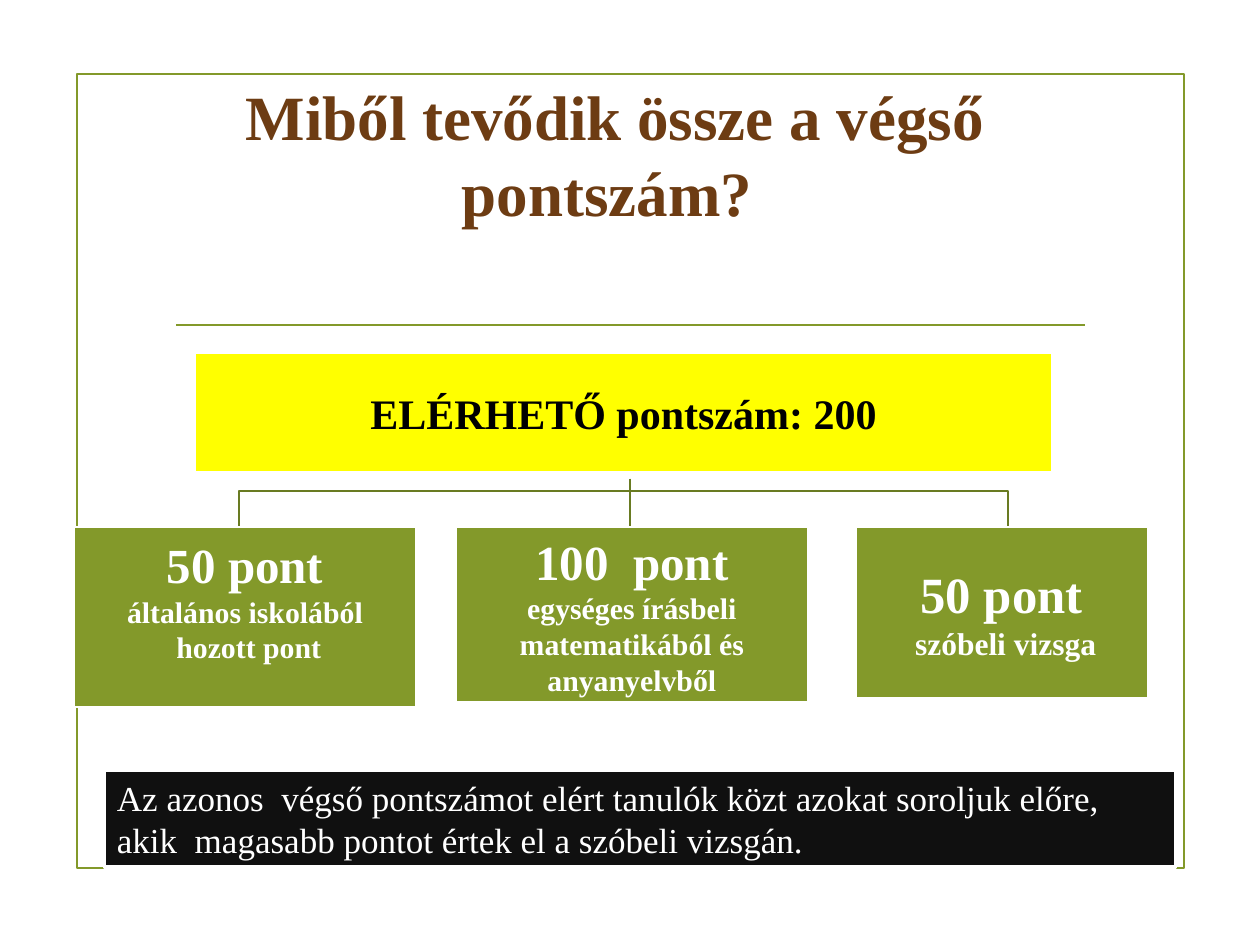
from pptx import Presentation
from pptx.util import Inches, Pt
from pptx.dml.color import RGBColor
from pptx.enum.shapes import MSO_SHAPE, MSO_CONNECTOR
from pptx.enum.text import PP_ALIGN, MSO_ANCHOR
from lxml import etree

RECT = MSO_SHAPE.RECTANGLE
LINE = MSO_CONNECTOR.STRAIGHT
LEFT, MID = PP_ALIGN.LEFT, PP_ALIGN.CENTER
CENTER = MSO_ANCHOR.MIDDLE
FONT = "Times New Roman"
HEX = {"green": "83992A", "dark": "697B22", "brown": "6D3C13",
       "yellow": "FFFF00", "white": "FFFFFF", "black": "000000", "ink": "101010"}
RGB = {name: RGBColor.from_string(code) for name, code in HEX.items()}

# Grid of 100 columns by 75 rows
deck = Presentation()
deck.slide_width, deck.slide_height = Inches(10), Inches(7.5)
CELL = deck.slide_width // 100
slide = deck.slides.add_slide(deck.slide_layouts[5])
shapes = slide.shapes


def block(col, row, wide, high, fill, edge="white", width=1.25):
    box = shapes.add_shape(RECT, *[int(n * CELL) for n in (col, row, wide, high)])
    box.shadow.inherit = False
    if fill:
        box.fill.solid()
        box.fill.fore_color.rgb = RGB[fill]
    else:
        box.fill.background()
    box.line.color.rgb = RGB[edge]
    box.line.width = Pt(width)
    return box


def write(box, lines, color, bold=True, align=MID, pad=None, foot=None):
    frame = box.text_frame
    frame.word_wrap = True
    frame.vertical_anchor = CENTER
    if pad is not None:
        frame.margin_left = frame.margin_right = Inches(pad)
        frame.margin_top = frame.margin_bottom = Inches(pad)
    if foot is not None:
        frame.margin_bottom = Inches(foot)
    for i, (text, size) in enumerate(lines):
        para = frame.add_paragraph() if i else frame.paragraphs[0]
        para.alignment = align
        run = para.add_run()
        run.text = text
        run.font.name, run.font.size, run.font.bold = FONT, Pt(size), bold
        run.font.color.rgb = RGB[color]


# Frame and rule
block(6.1, 5.9, 87.9, 63, None, "green")
rule = shapes.add_connector(LINE, 14 * CELL, int(25.8 * CELL),
                            int(86.1 * CELL), int(25.8 * CELL))
rule.line.color.rgb = RGB["green"]
rule.line.width = Pt(1.25)
etree.SubElement(rule._element.spPr,
                 "{http://schemas.openxmlformats.org/drawingml/2006/main}effectLst")

# Title
title = shapes.title
title.left, title.top, title.width, title.height = [
    int(n * CELL) for n in (11.6, 6.8, 74.4, 14.3)]
write(title, [("Miből tevődik össze a végső pontszám? ", 36)], "brown", foot=0.41)

# Parts of the score: left, width, height, bottom margin, lines
TOP, FORK, BASE, STEM = 41.8, 38.7, 37.5, 49.5
cards = [
    (5.9, 27.1, 14.3, 0.29, [("50 pont", 28), ("általános iskolából", 17),
                             (" hozott pont", 17)]),
    (36.2, 27.9, 13.9, 0.02, [("100  pont", 28), ("egységes írásbeli", 17),
                              ("matematikából és anyanyelvből", 17)]),
    (67.9, 23.2, 13.6, 0.02, [("50 pont", 29), (" szóbeli vizsga", 18)]),
]

# Branches from the total to each part
for col, wide, *_ in cards:
    mid = col + wide / 2
    path = shapes.build_freeform(STEM, BASE, scale=CELL)
    path.add_line_segments([(STEM, FORK), (mid, FORK), (mid, TOP)], close=False)
    branch = path.convert_to_shape()
    branch.shadow.inherit = False
    branch.fill.background()
    branch.line.color.rgb = RGB["dark"]
    branch.line.width = Pt(1.25)

# Total and parts
total = block(15.5, 28, 68, 9.5, "yellow")
write(total, [("ELÉRHETŐ pontszám: 200", 24)], "black", pad=0.02)
for col, wide, high, foot, lines in cards:
    write(block(col, TOP, wide, high, "green"), lines, "white", pad=0.02, foot=foot)

# Note on ties
note = block(8.3, 61.1, 85, 7.7, "ink", width=2)
write(note, [("Az azonos  végső pontszámot elért tanulók közt azokat soroljuk előre, "
              "akik  magasabb pontot értek el a szóbeli vizsgán.", 20)],
      "white", bold=False, align=LEFT)

deck.save("out.pptx")
